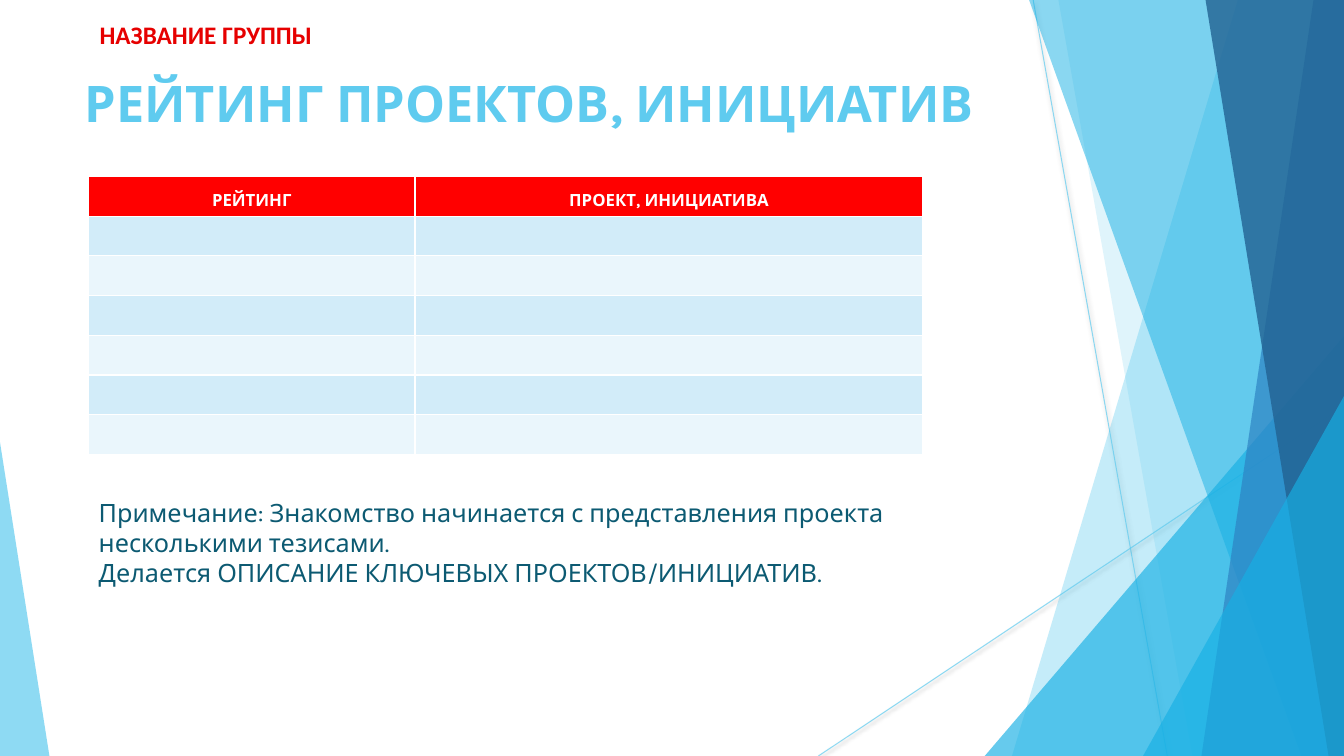
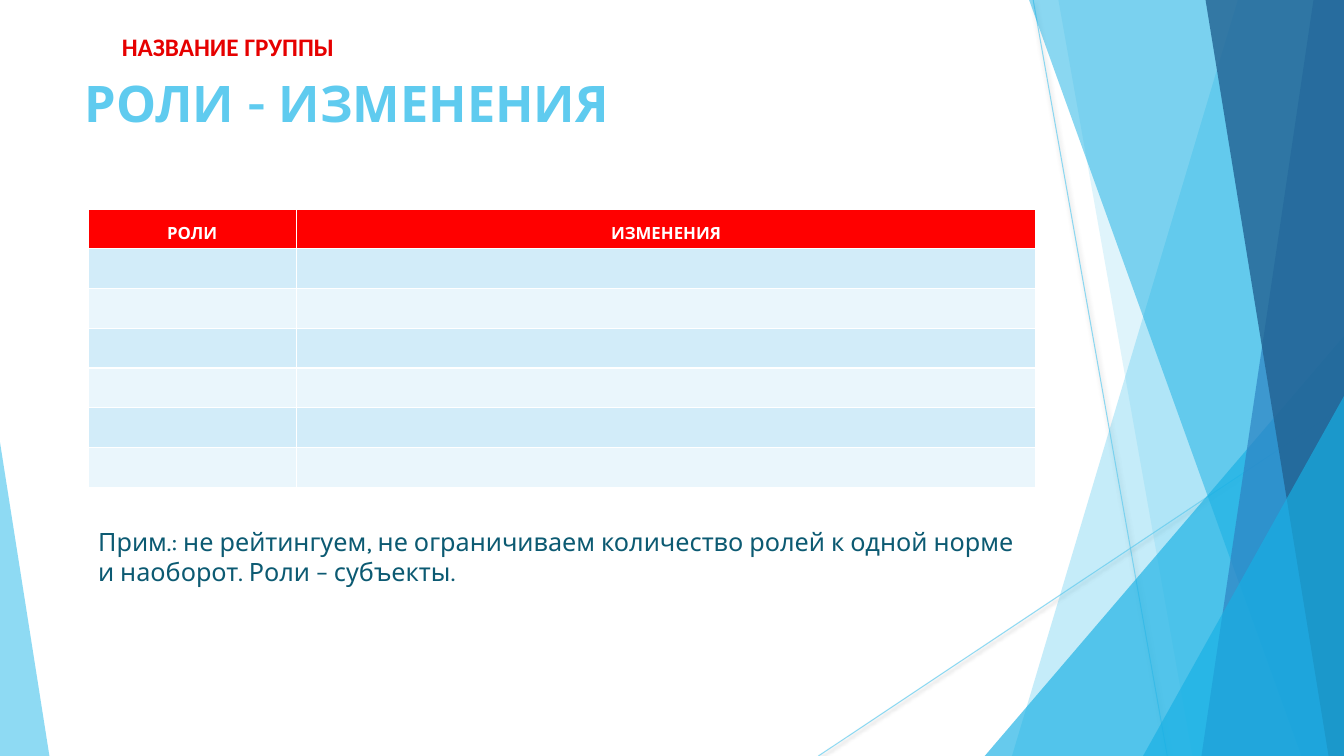
from dataclasses import dataclass

from lxml import etree
from pptx import Presentation
from pptx.dml.color import RGBColor
from pptx.enum.shapes import MSO_CONNECTOR, MSO_SHAPE
from pptx.enum.text import MSO_ANCHOR, MSO_AUTO_SIZE, PP_ALIGN
from pptx.oxml import parse_xml
from pptx.oxml.ns import qn
from pptx.util import Pt

STRAIGHT = MSO_CONNECTOR.STRAIGHT
TRIANGLE = MSO_SHAPE.ISOSCELES_TRIANGLE
TOP, MIDDLE = MSO_ANCHOR.TOP, MSO_ANCHOR.MIDDLE
LEFT, CENTER = PP_ALIGN.LEFT, PP_ALIGN.CENTER
FIT, FIXED = MSO_AUTO_SIZE.SHAPE_TO_FIT_TEXT, MSO_AUTO_SIZE.NONE
WIDE, HIGH = 960, 540


# Theme
@dataclass(frozen=True)
class Style:
    font: str
    size: float
    color: str
    bold: bool = False


@dataclass(frozen=True)
class Theme:
    title: Style = Style("Karla", 36, "5FCBEF", True)
    group: Style = Style("Calibri", 18, "E60000", True)
    head: Style = Style("Karla", 12, "FFFFFF", True)
    note: Style = Style("Karla", 18, "0C5A72")
    sky: str = "5FCBEF"
    azure: str = "17B0E4"
    blue: str = "2E83C3"
    navy: str = "226292"
    red: str = "FF0000"
    bands: tuple[str, str] = ("D2ECF9", "EAF6FC")
    row: float = 28.4


THEME = Theme()


# Repeated elements
@dataclass(frozen=True)
class Box:
    x: float
    y: float
    w: float
    h: float

    def place(self) -> tuple[Pt, Pt, Pt, Pt]:
        return Pt(self.x), Pt(self.y), Pt(self.w), Pt(self.h)


@dataclass(frozen=True)
class Ray:
    """Thin line from one point to another."""
    x1: float
    y1: float
    x2: float
    y2: float


@dataclass(frozen=True)
class Facet:
    """Shard from its top edge to its bottom edge, flush right."""
    top: float
    base: float
    color: str
    alpha: int


@dataclass(frozen=True)
class Wedge:
    """Triangle whose peak is at the left (0) or right (1)."""
    box: Box
    peak: int
    color: str
    alpha: int


@dataclass(frozen=True)
class Page:
    title: str
    group: Box
    heads: tuple[str, ...]
    left: float
    top: float
    cols: tuple[float, ...]
    note: Box
    text: str


DECOR = (
    Ray(738, 0, 833.8, HIGH),
    Ray(WIDE, 290, 584.6, HIGH),
    Facet(884.2, 722.9, THEME.sky, 36),
    Facet(756, 851.8, THEME.sky, 20),
    Wedge(Box(703.4, 240, 256.6, 300), 1, THEME.azure, 66),
    Facet(735.1, 929.5, THEME.azure, 50),
    Facet(938.2, 858.2, THEME.blue, 70),
    Facet(861.1, 949, THEME.navy, 80),
    Wedge(Box(816.5, 283, 143.5, 257), 1, THEME.azure, 66),
    Wedge(Box(0, 316, 35.3, 224), 0, THEME.sky, 70),
)

PAGES = (
    Page("РЕЙТИНГ ПРОЕКТОВ, ИНИЦИАТИВ", Box(64.1, 10.8, 515, 28),
         ("РЕЙТИНГ", "ПРОЕКТ, ИНИЦИАТИВА"), 63.4, 126, (233, 362.9),
         Box(63.4, 351.4, 586, 72.7),
         "Примечание: Знакомство начинается с представления проекта "
         "несколькими тезисами.\n"
         "Делается ОПИСАНИЕ КЛЮЧЕВЫХ ПРОЕКТОВ/ИНИЦИАТИВ."),
    Page("РОЛИ - ИЗМЕНЕНИЯ", Box(79.9, 19.4, 515, 28),
         ("РОЛИ", "ИЗМЕНЕНИЯ"), 63, 149.4, (148.6, 528.4),
         Box(63, 372.2, 677, 51),
         "Прим.: не рейтингуем, не ограничиваем количество ролей к одной "
         "норме и наоборот. Роли – субъекты."),
)
TITLE = Box(53.3, 48.2, 677, 103.7)
BANDS = 6


# Text
def write(frame, text: str, style: Style, align=LEFT) -> None:
    frame.text = text
    for para in frame.paragraphs:
        para.alignment = align
        for run in para.runs:
            font = run.font
            font.name, font.size, font.bold = style.font, Pt(style.size), style.bold
            font.color.rgb = RGBColor.from_string(style.color)


def label(slide, box: Box, text: str, style: Style, anchor=TOP, fit=FIXED) -> None:
    frame = slide.shapes.add_textbox(*box.place()).text_frame
    frame.word_wrap, frame.auto_size = True, fit
    frame.vertical_anchor = anchor
    write(frame, text, style)


# Backdrop
def fade(shape, alpha: int) -> None:
    for color in shape.element.spPr.iter(qn("a:srgbClr")):
        etree.SubElement(color, qn("a:alpha")).set("val", str(alpha * 1000))


def paint(shape, color: str, alpha: int) -> None:
    shape.shadow.inherit = False
    shape.fill.solid()
    shape.fill.fore_color.rgb = RGBColor.from_string(color)
    shape.line.fill.background()
    fade(shape, alpha)


def add_ray(group, ray: Ray) -> None:
    line = group.shapes.add_connector(
        STRAIGHT, Pt(ray.x1), Pt(ray.y1), Pt(ray.x2), Pt(ray.y2))
    line.line.width = Pt(0.75)
    line.line.color.rgb = RGBColor.from_string(THEME.sky)
    fade(line, 70)
    line.element.spPr.append(parse_xml(
        '<a:effectLst xmlns:a="http://schemas.openxmlformats.org/drawingml/2006/main">'
        f'<a:outerShdw blurRad="{Pt(3.1)}" dist="{Pt(1.6)}" dir="5400000">'
        '<a:srgbClr val="000000"><a:alpha val="38000"/></a:srgbClr>'
        '</a:outerShdw></a:effectLst>'))


def add_facet(group, facet: Facet) -> None:
    path = group.shapes.build_freeform(Pt(facet.top), 0)
    path.add_line_segments([(Pt(WIDE), 0), (Pt(WIDE), Pt(HIGH)),
                            (Pt(facet.base), Pt(HIGH))], close=True)
    paint(path.convert_to_shape(), facet.color, facet.alpha)


def add_wedge(group, wedge: Wedge) -> None:
    shape = group.shapes.add_shape(TRIANGLE, *wedge.box.place())
    shape.adjustments[0] = wedge.peak
    paint(shape, wedge.color, wedge.alpha)


DRAW = {Ray: add_ray, Facet: add_facet, Wedge: add_wedge}


def add_decor(slide) -> None:
    """Draw the backdrop and move it to the layout all slides share."""
    group = slide.shapes.add_group_shape()
    for part in DECOR:
        DRAW[type(part)](group, part)
    for num, node in enumerate(group.element.iter(qn("p:cNvPr")), 101):
        node.set("id", str(num))
    slide.slide_layout.shapes.element.insert(2, group.element)


# Table
def add_grid(slide, page: Page) -> None:
    rows = BANDS + 1
    box = Box(page.left, page.top, sum(page.cols), rows * THEME.row)
    grid = slide.shapes.add_table(rows, len(page.cols), *box.place()).table
    for col, width in zip(grid.columns, page.cols):
        col.width = Pt(width)
    for num, row in enumerate(grid.rows):
        row.height = Pt(THEME.row)
        color = THEME.bands[(num - 1) % 2] if num else THEME.red
        for cell, head in zip(row.cells, page.heads):
            cell.fill.solid()
            cell.fill.fore_color.rgb = RGBColor.from_string(color)
            if num:
                cell.margin_top = cell.margin_bottom = 0
            else:
                write(cell.text_frame, head, THEME.head, CENTER)
                cell.text_frame.paragraphs[0].line_spacing = 1.5


# Slides
def add_page(slide, page: Page) -> None:
    title = slide.shapes.title
    title.left, title.top, title.width, title.height = TITLE.place()
    frame = title.text_frame
    frame.vertical_anchor, frame.auto_size = TOP, FIXED
    write(frame, page.title, THEME.title)
    add_grid(slide, page)
    label(slide, page.note, page.text, THEME.note, fit=FIT)
    label(slide, page.group, "НАЗВАНИЕ ГРУППЫ", THEME.group, MIDDLE)


def main() -> None:
    deck = Presentation()
    deck.slide_width, deck.slide_height = Pt(WIDE), Pt(HIGH)
    layout = deck.slide_layouts.get_by_name("Title Only")
    slides = [deck.slides.add_slide(layout) for _ in PAGES]
    add_decor(slides[0])
    for slide, page in zip(slides, PAGES):
        add_page(slide, page)
    deck.save("out.pptx")


if __name__ == "__main__":
    main()
